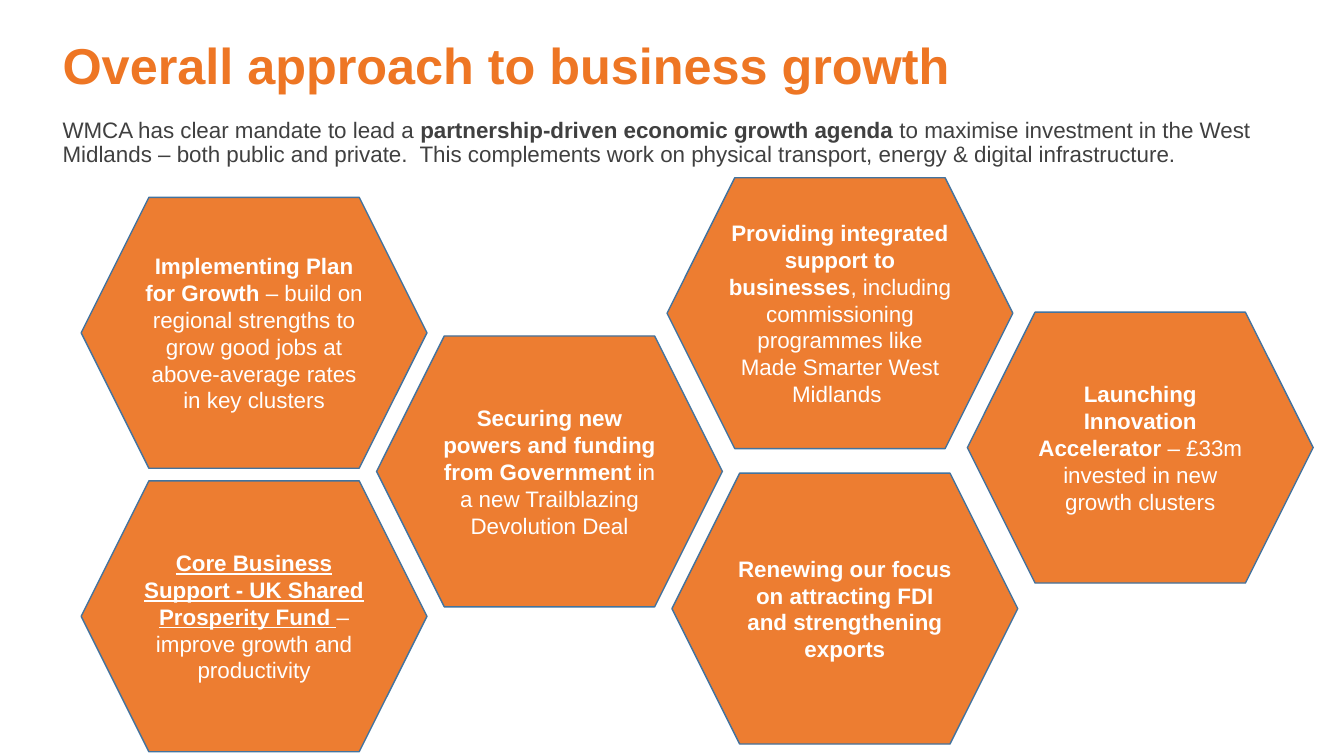
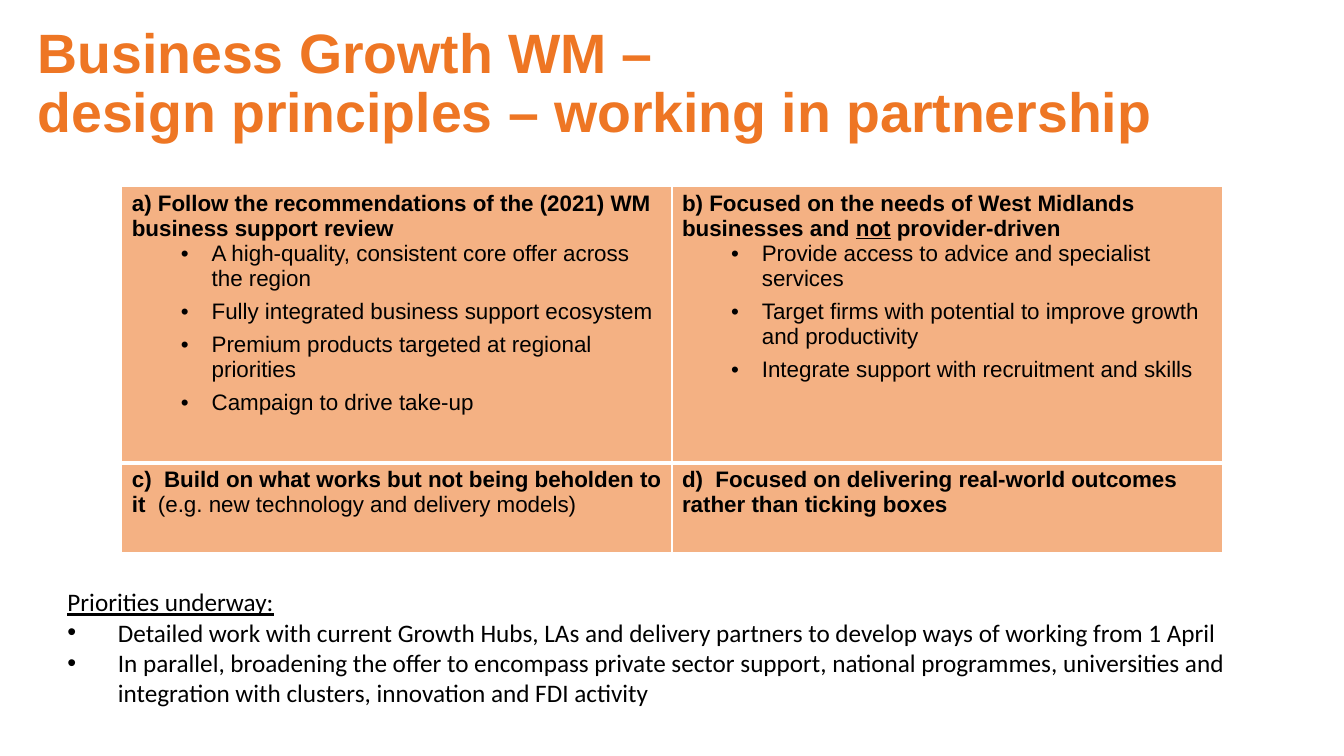
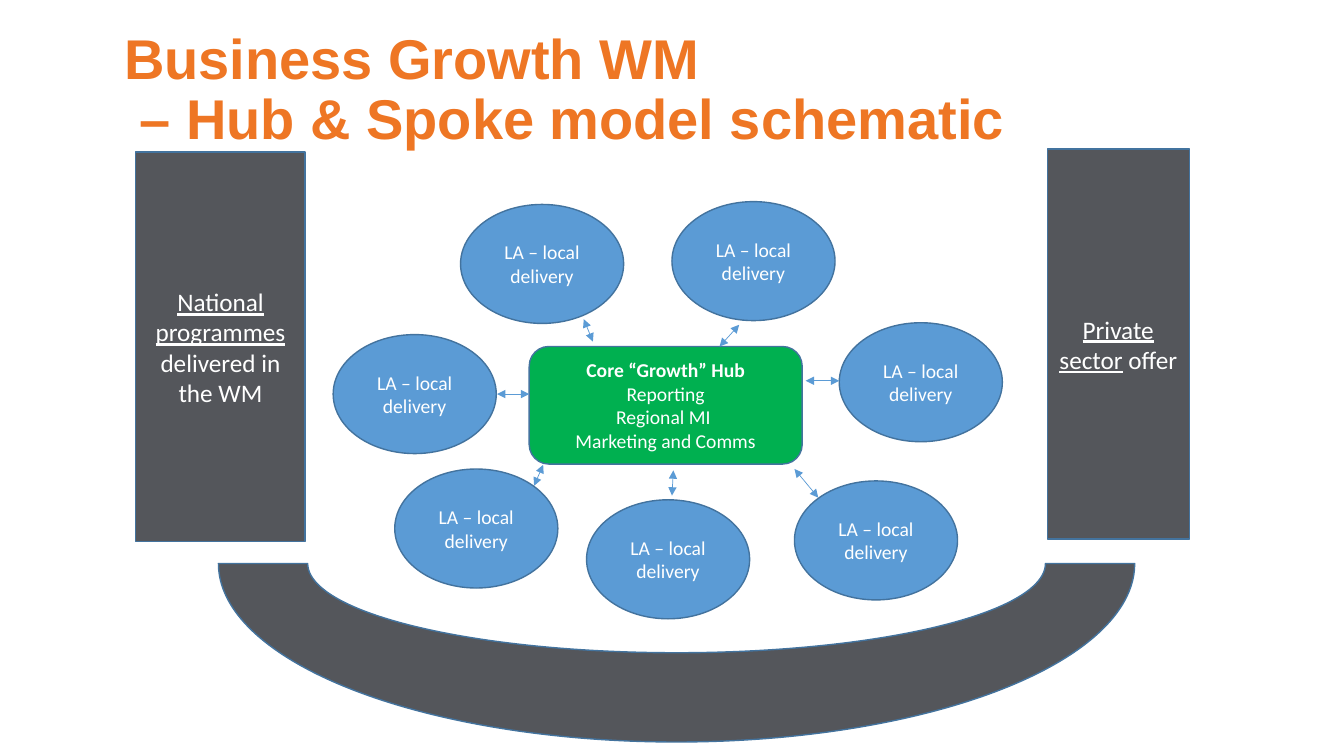
import copy

import lxml.etree
import pptx
import pptx.dml.color
import pptx.enum.shapes
import pptx.enum.text
import pptx.oxml.ns
import pptx.util

Pt = pptx.util.Pt
RGBColor = pptx.dml.color.RGBColor
SHAPE = pptx.enum.shapes.MSO_SHAPE
ALIGN = pptx.enum.text.PP_ALIGN
qn = pptx.oxml.ns.qn

# Shared look
TITLE_ORANGE = RGBColor(0xEE, 0x76, 0x24)
HEXAGON_ORANGE = RGBColor(0xED, 0x7D, 0x31)
CELL_ORANGE = RGBColor(0xF4, 0xB1, 0x83)
SPOKE_BLUE = RGBColor(0x5B, 0x9B, 0xD5)
OUTLINE_BLUE = RGBColor(0x43, 0x73, 0x9E)
HUB_GREEN = RGBColor(0x00, 0xB0, 0x50)
PILLAR_GREY = RGBColor(0x54, 0x56, 0x5B)
TEXT_GREY = RGBColor(0x40, 0x40, 0x40)
BLACK = RGBColor(0, 0, 0)
WHITE = RGBColor(0xFF, 0xFF, 0xFF)

TITLE_ONLY, TITLE_AND_BODY = 5, 1  # layout numbers


def write(frame, text, size=16, font="Arial", color=WHITE, align=ALIGN.LEFT,
          spacing=1, after=0, level=0, bullet=None):
    """Add a paragraph. text is a string or (text, style) pairs, with style
    letters b (bold) and u (underlined); bullet is (left indent, hanging)."""
    paragraph = frame.add_paragraph() if frame.text else frame.paragraphs[0]
    paragraph.alignment, paragraph.level = align, level
    paragraph.line_spacing = spacing
    paragraph.space_before, paragraph.space_after = Pt(0), Pt(after)
    properties = paragraph._p.get_or_add_pPr()
    left, hanging = bullet or (0, 0)
    properties.set("marL", str(Pt(left)))
    properties.set("indent", str(-Pt(hanging)))
    if bullet:
        lxml.etree.SubElement(properties, qn("a:buFont"), typeface="Arial")
        lxml.etree.SubElement(properties, qn("a:buChar"), char="•")
    else:
        lxml.etree.SubElement(properties, qn("a:buNone"))
    for words, style in [(text, "")] if isinstance(text, str) else text:
        for number, line in enumerate(words.split("\n")):
            if number:
                paragraph.add_line_break()
                paragraph._p[-1].append(copy.deepcopy(run._r.rPr))
            run = paragraph.add_run()
            run.text = line
            run.font.size, run.font.name = Pt(size), font
            run.font.color.rgb = color
            run.font.bold, run.font.underline = "b" in style, "u" in style


def place(part, box):
    part.left, part.top, part.width, part.height = (Pt(v) for v in box)


def add_slide(deck, layout, title, title_box, size):
    slide = deck.slides.add_slide(deck.slide_layouts[layout])
    heading = slide.shapes.title
    place(heading, title_box)
    heading.text_frame.auto_size = pptx.enum.text.MSO_AUTO_SIZE.NONE
    heading.text_frame.vertical_anchor = pptx.enum.text.MSO_ANCHOR.MIDDLE
    write(heading.text_frame, [(title, "b")], size=size, color=TITLE_ORANGE,
          spacing=0.9)
    return slide


def body_frame(slide, box):
    body = slide.placeholders[1]
    place(body, box)
    body.text_frame.auto_size = pptx.enum.text.MSO_AUTO_SIZE.NONE
    return body.text_frame


def add_panel(slide, kind, box, fill, paragraphs=(), **style):
    panel = slide.shapes.add_shape(kind, *(Pt(v) for v in box))
    panel.shadow.inherit = False
    panel.fill.solid()
    panel.fill.fore_color.rgb = fill
    panel.line.color.rgb = OUTLINE_BLUE
    panel.line.width = Pt(1)
    for text in paragraphs:
        write(panel.text_frame, text, align=ALIGN.CENTER, **style)
    return panel


def add_double_arrow(slide, start, end):
    arrow = slide.shapes.add_connector(
        pptx.enum.shapes.MSO_CONNECTOR.STRAIGHT,
        *(Pt(v) for v in (*start, *end)))
    arrow.line.color.rgb = SPOKE_BLUE
    arrow.line.width = Pt(0.5)
    outline = arrow.line._get_or_add_ln()
    for tip in ("a:headEnd", "a:tailEnd"):
        lxml.etree.SubElement(outline, qn(tip), type="triangle")
    lxml.etree.SubElement(arrow._element.spPr, qn("a:effectLst"))


# Slide 1: approach
HEXAGON_SIZE = (247, 193.5)
HEXAGONS = [  # offset in the cluster, text, space after
    ((0, 14), [("Implementing Plan for Growth ", "b"),
               ("– build on regional strengths to grow good jobs at "
                "above-average rates in key clusters", "")], 0),
    ((418.5, 0), [("Providing integrated support to businesses", "b"),
                  (", including commissioning programmes like Made Smarter "
                   "West Midlands ", "")], 6),
    ((633, 96), [("Launching Innovation Accelerator ", "b"),
                 ("– £33m invested in new growth clusters", "")], 0),
    ((0, 202.5), [("Core Business Support - UK Shared Prosperity Fund ", "bu"),
                  ("– improve growth and productivity", "")], 6),
    ((422, 211), [("Renewing our focus on attracting FDI and strengthening "
                   "exports", "b")], 6),
    ((211, 113), [("Securing new powers and funding from Government ", "b"),
                  ("in a new Trailblazing Devolution Deal", "")], 6),
]


def add_hexagon_cluster(slide, left, top):
    for (x, y), text, after in HEXAGONS:
        # The lower left hexagon sits one height and a gap below the upper one
        if (x, y) == (0, 202.5):
            y = 14 + HEXAGON_SIZE[1] + 9
        add_panel(slide, SHAPE.HEXAGON, (left + x, top + y, *HEXAGON_SIZE),
                  HEXAGON_ORANGE, [text], after=after)


def build_approach(deck):
    slide = add_slide(deck, TITLE_AND_BODY, "Overall approach to business growth",
                      (37.5, 2, 828, 93), 36)
    write(body_frame(slide, (37.5, 81.5, 885.5, 342.5)),
          [("WMCA has clear mandate to lead a ", ""),
           ("partnership-driven economic growth agenda ", "b"),
           ("to maximise investment in the West Midlands – both public and "
            "private.  This complements work on physical transport, energy & "
            "digital infrastructure.", "")],
          color=TEXT_GREY, spacing=0.9, after=6)
    add_hexagon_cluster(slide, 58, 127)


# Slide 2: design principles
PRINCIPLES = [  # rows of (heading, bullets)
    [([("a) Follow the recommendations of the (2021) WM business support "
        "review", "b")],
      ["A high-quality, consistent core offer across the region",
       "Fully integrated business support ecosystem",
       "Premium products targeted at regional priorities",
       "Campaign to drive take-up"]),
     ([("b) Focused on the needs of West Midlands businesses and ", "b"),
       ("not", "bu"), (" provider-driven", "b")],
      ["Provide access to advice and specialist services",
       "Target firms with potential to improve growth and productivity",
       "Integrate support with recruitment and skills"])],
    [([("c)  Build on what works but not being beholden to it  ", "b"),
       ("(e.g. new technology and delivery models)", "")], []),
     ([("d)  Focused on delivering real-world outcomes rather than ticking "
        "boxes", "b")], [])],
]
PRIORITIES = [
    "Detailed work with current Growth Hubs, LAs and delivery partners to "
    "develop ways of working from 1 April",
    "In parallel, broadening the offer to encompass private sector support, "
    "national programmes, universities and integration with clusters, "
    "innovation and FDI activity",
]


def format_cell(cell, bottom_width):
    properties = cell._tc.get_or_add_tcPr()
    for side, width in (("L", 1), ("R", 1), ("T", 1), ("B", bottom_width)):
        border = lxml.etree.SubElement(properties, qn("a:ln" + side),
                                       w=str(Pt(width)))
        fill = lxml.etree.SubElement(border, qn("a:solidFill"))
        lxml.etree.SubElement(fill, qn("a:srgbClr"), val=str(WHITE))
    cell.fill.solid()
    cell.fill.fore_color.rgb = CELL_ORANGE


def add_principles_table(slide, box, row_heights):
    table = slide.shapes.add_table(2, 2, *(Pt(v) for v in box)).table
    table.first_row = table.horz_banding = False
    for row, height in enumerate(row_heights):
        table.rows[row].height = Pt(height)
        for column, (heading, points) in enumerate(PRINCIPLES[row]):
            cell = table.cell(row, column)
            format_cell(cell, 1 if row else 3)
            write(cell.text_frame, heading, color=BLACK)
            for point in points:
                write(cell.text_frame, point, color=BLACK, level=1,
                      bullet=(57, 22),
                      after=0 if point == "Campaign to drive take-up" else 6)


def build_principles(deck):
    slide = add_slide(
        deck, TITLE_AND_BODY,
        "Business Growth WM – \ndesign principles – working in partnership",
        (19.5, 8.5, 828, 104.5), 39.6)
    priorities = body_frame(slide, (41, 415.5, 878.5, 94.5))
    style = dict(size=18, font="Calibri", color=BLACK)
    write(priorities, [("Priorities underway:", "u")], **style)
    for priority in PRIORITIES:
        write(priorities, priority, bullet=(36, 36), **style)
    add_principles_table(slide, (87, 133, 786, 262), (197.5, 64.5))


# Slide 3: hub and spoke
SPOKE_SIZE = (116.5, 85)
SPOKES = [  # offset of the ellipse, then both ends of its arrow
    ((361.5, 86.5), (361.5, 128), (337.5, 128)),
    ((0, 95), (117, 137.5), (140, 137.5)),
    ((329.5, 199.5), (346.5, 211.5), (329.5, 191)),
    ((181, 213), (242, 210), (243, 192)),
    ((242, 0), (276, 103.5), (290, 88)),
    ((91, 2), (179, 84), (185.5, 100)),
    ((44, 191), (143.5, 203), (150, 188)),
]
HUB_LINES = [[("Core “Growth” Hub", "b")], "Reporting", "Regional MI ",
             "Marketing and Comms"]


def add_hub_and_spokes(slide, left, top):
    style = dict(size=14, font="Calibri")
    for (x, y), _, _ in SPOKES:
        add_panel(slide, SHAPE.OVAL, (left + x, top + y, *SPOKE_SIZE),
                  SPOKE_BLUE, ["LA – local delivery"], **style)
    add_panel(slide, SHAPE.ROUNDED_RECTANGLE, (left + 140, top + 103.5, 195, 84),
              HUB_GREEN, HUB_LINES, **style)
    for _, *ends in SPOKES:
        add_double_arrow(slide, *((left + x, top + y) for x, y in ends))


def build_schematic(deck):
    slide = add_slide(deck, TITLE_ONLY,
                      "Business Growth WM \n – Hub & Spoke model schematic",
                      (81.5, 13, 828, 104.5), 40)
    add_hub_and_spokes(slide, 238, 144)
    # Supporting pillars and the arc below them
    for box, text in (
            ((97, 108.5, 121, 278.5),
             [("National programmes ", "u"), ("delivered in the WM", "")]),
            ((748, 106.5, 101.5, 278.5),
             [("Private sector", "u"), (" offer", "")])):
        add_panel(slide, SHAPE.RECTANGLE, box, PILLAR_GREY, [text],
                  size=18, font="Calibri")
    arc = add_panel(slide, SHAPE.BLOCK_ARC, (156, 275, 654.5, 255), PILLAR_GREY)
    arc.rotation = 180


def main():
    deck = pptx.Presentation()
    deck.slide_width, deck.slide_height = Pt(960), Pt(540)
    build_approach(deck)
    build_principles(deck)
    build_schematic(deck)
    deck.save("out.pptx")


if __name__ == "__main__":
    main()
